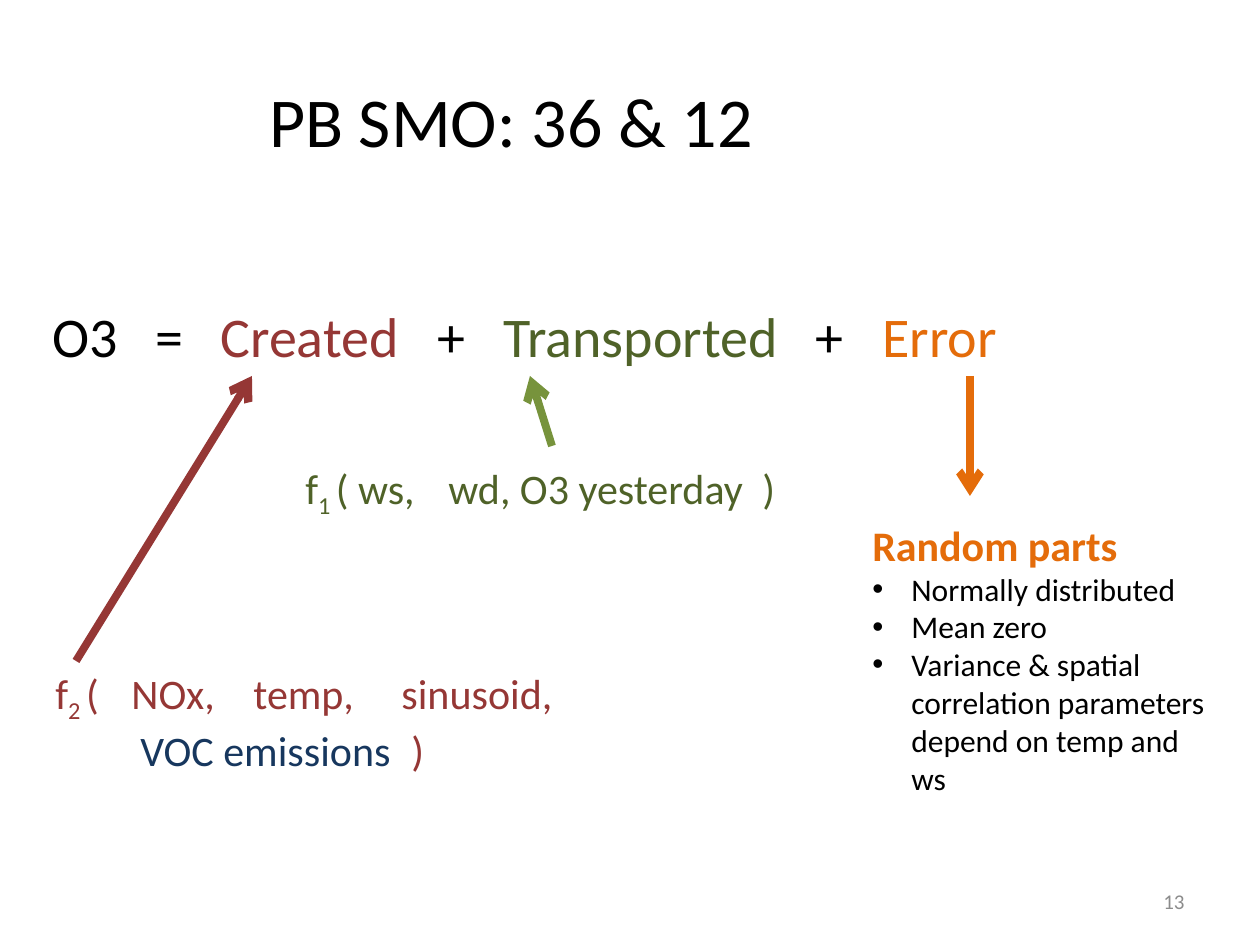
"""Builds the slide that splits ozone into created, transported and error terms."""
import lxml.etree
import pptx
import pptx.dml.color
import pptx.enum.shapes
import pptx.enum.text
import pptx.oxml.ns
import pptx.util

PIXEL = 914400 // 126
THEME = {
    "font": "Calibri",
    "black": "000000", "created": "953735", "transported": "4F6228",
    "transport_arrow": "77933C", "error": "E46C0A", "emissions": "17375E", "gray": "8C8C8C",
    "title": 40, "equation": 32, "term": 24, "list": 18, "number": 12, "arrow": 4.5,
}
ALIGN = pptx.enum.text.PP_ALIGN
qn = pptx.oxml.ns.qn

deck = pptx.Presentation()
deck.slide_width, deck.slide_height = 1260 * PIXEL, 945 * PIXEL
page = deck.slides.add_slide(deck.slide_layouts[6])


def add_text(area, lines, size, align=ALIGN.LEFT, tabs=()):
    box = page.shapes.add_textbox(*[length * PIXEL for length in area])
    frame = box.text_frame
    frame.word_wrap = True
    for index, line in enumerate(lines):
        para = frame.paragraphs[0] if index == 0 else frame.add_paragraph()
        para.alignment = align
        for text, color in line:
            span = para.add_run()
            span.text = text
            span.font.name = THEME["font"]
            span.font.size = pptx.util.Pt(THEME[size])
            span.font.color.rgb = pptx.dml.color.RGBColor.from_string(THEME[color])
        if tabs:
            stops = lxml.etree.SubElement(para._p.get_or_add_pPr(), qn("a:tabLst"))
            for stop in tabs[index]:
                lxml.etree.SubElement(stops, qn("a:tab"), pos=str(stop * PIXEL), algn="l")
    return box


def add_arrow(start, end, color):
    points = [length * PIXEL for length in start + end]
    arrow = page.shapes.add_connector(pptx.enum.shapes.MSO_CONNECTOR.STRAIGHT, *points)
    arrow.line.color.rgb = pptx.dml.color.RGBColor.from_string(THEME[color])
    arrow.line.width = pptx.util.Pt(THEME["arrow"])
    lxml.etree.SubElement(arrow.line._get_or_add_ln(), qn("a:tailEnd"), type="arrow")
    lxml.etree.SubElement(arrow._element.spPr, qn("a:effectLst"))
    return arrow


add_text((254, 71, 514, 97), [[("PB SMO: 36 & 12", "black")]], "title", ALIGN.CENTER)

equation = add_text(
    (40, 295, 980, 81),
    [[("O3\t=\t", "black"), ("Created", "created"), ("\t+\t", "black"),
      ("Transported", "transported"), ("\t+\t", "black"), ("Error", "error")]],
    "equation", tabs=[(103, 168, 385, 451, 763, 830)])

created = add_text(
    (43, 661, 537, 115),
    [[("f", "created"), ("2 ", "created"), ("(\tNOx,\ttemp,\tsinusoid,", "created")],
     [("\tVOC emissions", "emissions"), ("\t)", "created")]],
    "term", tabs=[(76, 198, 346), (85, 356)])

transported = add_text(
    (293, 456, 507, 63),
    [[("f", "transported"), ("1 ", "transported"),
      ("( ws,\twd, O3 yesterday\t)", "transported")]],
    "term", tabs=[(143, 457)])

for box in (created, transported):
    subscript = box.text_frame.paragraphs[0].runs[1]
    subscript.font._element.set("baseline", "-25000")

parts = ["Normally distributed", "Mean zero",
         "Variance & spatial correlation parameters depend on temp and ws"]
random_parts = add_text(
    (860, 513, 371, 292),
    [[("Random parts", "error")]] + [[(part, "black")] for part in parts], "list")
heading, *items = random_parts.text_frame.paragraphs
heading.runs[0].font.size = pptx.util.Pt(THEME["term"])
heading.runs[0].font.bold = True
for item in items:
    properties = item._p.get_or_add_pPr()
    properties.set("marL", str(39 * PIXEL))
    properties.set("indent", str(-39 * PIXEL))
    lxml.etree.SubElement(properties, qn("a:buFont"), typeface="Arial")
    lxml.etree.SubElement(properties, qn("a:buChar"), char="•")

add_arrow((76, 661), (252, 376), "created")
add_arrow((552, 446), (530, 376), "transport_arrow").end_connect(equation, 2)
add_arrow((970, 376), (970, 496), "error")

number = add_text((903, 876, 294, 50), [[("13", "gray")]], "number", ALIGN.RIGHT)
number.text_frame.vertical_anchor = pptx.enum.text.MSO_ANCHOR.MIDDLE

deck.save("out.pptx")
